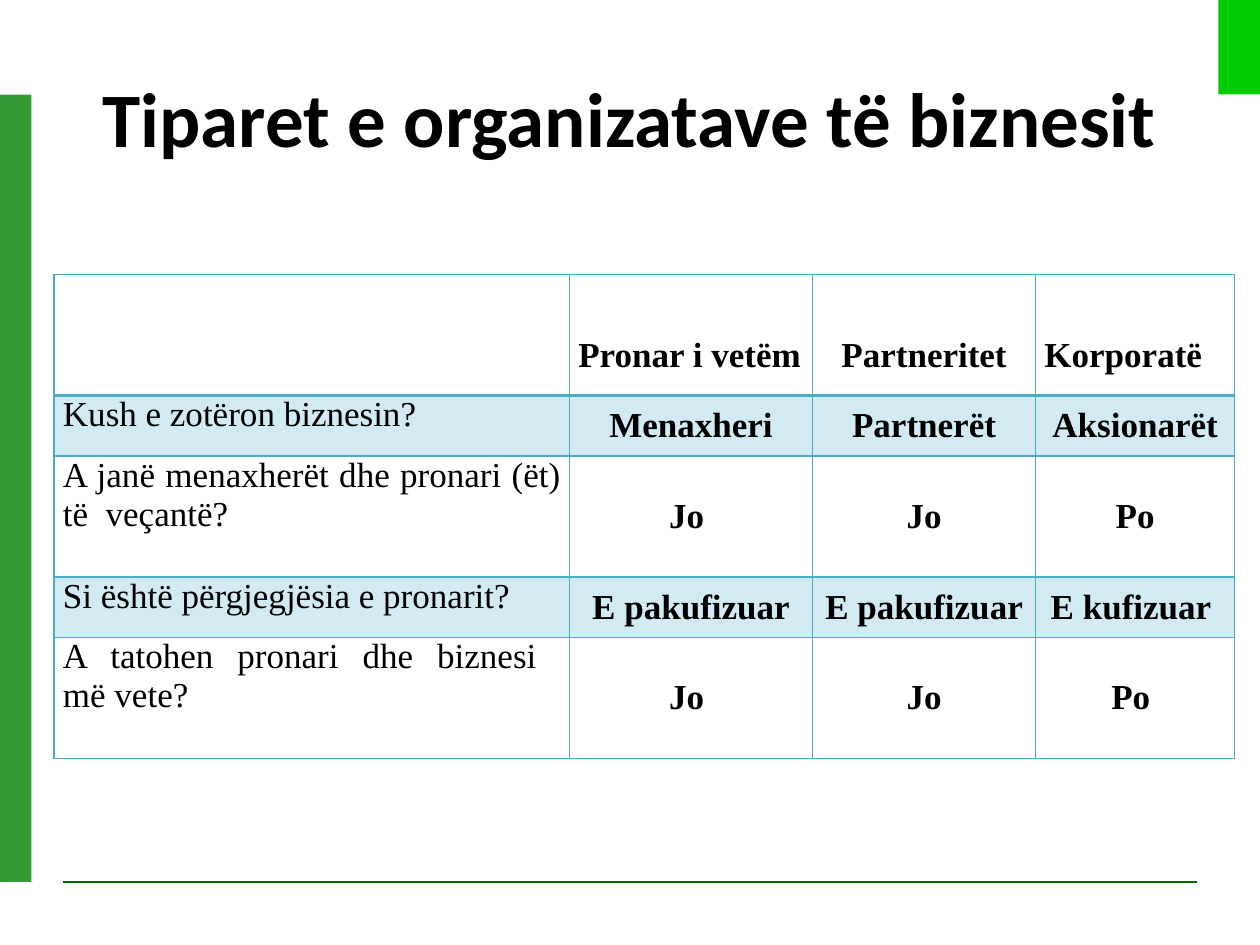
from lxml.etree import SubElement
from pptx import Presentation
from pptx.dml.color import RGBColor
from pptx.enum.shapes import MSO_CONNECTOR as CONN, MSO_SHAPE as SHAPE
from pptx.enum.text import MSO_ANCHOR as ANCHOR, PP_ALIGN as ALIGN
from pptx.oxml import parse_xml
from pptx.oxml.ns import nsdecls, qn
from pptx.util import Inches, Pt

BLACK = RGBColor(0x00, 0x00, 0x00)
DARK_GREEN = RGBColor(0x00, 0x66, 0x00)
SIDE_GREEN = RGBColor(0x33, 0x99, 0x33)
BRIGHT_GREEN = RGBColor(0x00, 0xCC, 0x00)
TEAL = RGBColor(0x4B, 0xAC, 0xC6)
PALE_BLUE = RGBColor(0xD2, 0xEA, 0xF1)

TITLE = {"name": "Calibri", "size": Pt(44), "bold": True}
STRONG = {"name": "Times New Roman", "size": Pt(20), "bold": True}
PLAIN = {**STRONG, "bold": False}

COLS = [4.09, 1.93, 1.77, 1.58]
ROWS = [0.96, 0.48, 0.96, 0.48, 0.96]
HEADER_ALIGN = [ALIGN.LEFT, ALIGN.LEFT, ALIGN.CENTER, ALIGN.LEFT]
BODY_ALIGN = [ALIGN.JUSTIFY] + [ALIGN.CENTER] * 3
DATA = [
    ["", "Pronar i vetëm", "Partneritet", "Korporatë"],
    ["Kush e zotëron biznesin?", "Menaxheri", "Partnerët", "Aksionarët"],
    ["A janë menaxherët dhe pronari (ët) të  veçantë?", "Jo ", "Jo", "Po"],
    ["Si është përgjegjësia e pronarit?", "E pakufizuar", "E pakufizuar", "E kufizuar "],
    ["A tatohen pronari dhe biznesi \nmë vete?", "Jo ", "Jo", "Po "],
]


class SlideBuilder:
    def __init__(self, slide):
        self.s = slide

    def text(self, tf, text, align, style):
        p = tf.paragraphs[0]
        p.text = text
        p.alignment = align
        for r in p.runs:
            for key, value in style.items():
                setattr(r.font, key, value)
            r.font.color.rgb = BLACK

    def bar(self, x, y, w, h, color):
        sp = self.s.shapes.add_shape(SHAPE.RECTANGLE, Inches(x), Inches(y), Inches(w), Inches(h))
        sp.shadow.inherit = False
        sp.fill.solid()
        sp.fill.fore_color.rgb = color
        sp.line.fill.background()

    def rule(self, x1, y1, x2, y2, color):
        line = self.s.shapes.add_connector(
            CONN.STRAIGHT, Inches(x1), Inches(y1), Inches(x2), Inches(y2))
        line.line.color.rgb = color
        line.line.width = Pt(1)
        SubElement(line._element.spPr, qn("a:effectLst"))

    def title(self, x, y, w, h, text):
        tf = self.s.shapes.add_textbox(Inches(x), Inches(y), Inches(w), Inches(h)).text_frame
        tf.word_wrap = True
        tf.vertical_anchor = ANCHOR.MIDDLE
        self.text(tf, text, ALIGN.CENTER, TITLE)

    def borders(self, cell, widths):
        tc_pr = cell._tc.get_or_add_tcPr()
        for i, (side, width) in enumerate(widths.items()):
            tc_pr.insert(i, parse_xml(
                f'<a:ln{side} {nsdecls("a")} w="{Pt(width)}"><a:solidFill>'
                f'<a:srgbClr val="{TEAL}"/></a:solidFill></a:ln{side}>'))

    def cell(self, cell, row, col, text):
        header = row == 0
        question = col == 0 and not header
        fmt = {
            "margin_left": Inches(0.07),
            "margin_right": Inches(0.07),
            "margin_top": Inches(0.32 if header else 0),
            "margin_bottom": 0,
            "vertical_anchor": ANCHOR.TOP if question else ANCHOR.MIDDLE,
        }
        for key, value in fmt.items():
            setattr(cell, key, value)
        align = (HEADER_ALIGN if header else BODY_ALIGN)[col]
        self.text(cell.text_frame, text, align, PLAIN if question else STRONG)
        if row % 2:
            cell.fill.solid()
            cell.fill.fore_color.rgb = PALE_BLUE
        else:
            cell.fill.background()
        self.borders(cell, {"L": 1, "R": 1, "T": 2.25 if row == 1 else 1, "B": 2.25 if header else 1})

    def table(self, x, y, data):
        table = self.s.shapes.add_table(
            len(ROWS), len(COLS), Inches(x), Inches(y),
            Inches(sum(COLS)), Inches(sum(ROWS))).table
        table.first_row = table.horz_banding = False
        for column, width in zip(table.columns, COLS):
            column.width = Inches(width)
        for row, height in zip(table.rows, ROWS):
            row.height = Inches(height)
        for i, texts in enumerate(data):
            for j, text in enumerate(texts):
                self.cell(table.cell(i, j), i, j, text)


def main():
    prs = Presentation()
    prs.slide_width, prs.slide_height = Inches(10), Inches(7.5)
    b = SlideBuilder(prs.slides.add_slide(prs.slide_layouts[6]))
    b.rule(0.5, 7, 9.5, 7, DARK_GREEN)
    b.bar(0, 0.75, 0.25, 6.25, SIDE_GREEN)
    b.bar(9.67, 0, 0.33, 0.75, BRIGHT_GREEN)
    b.title(0.5, 0.3, 9, 1.25, "Tiparet e organizatave të biznesit")
    b.table(0.43, 2.18, DATA)
    prs.save("out.pptx")


if __name__ == "__main__":
    main()
